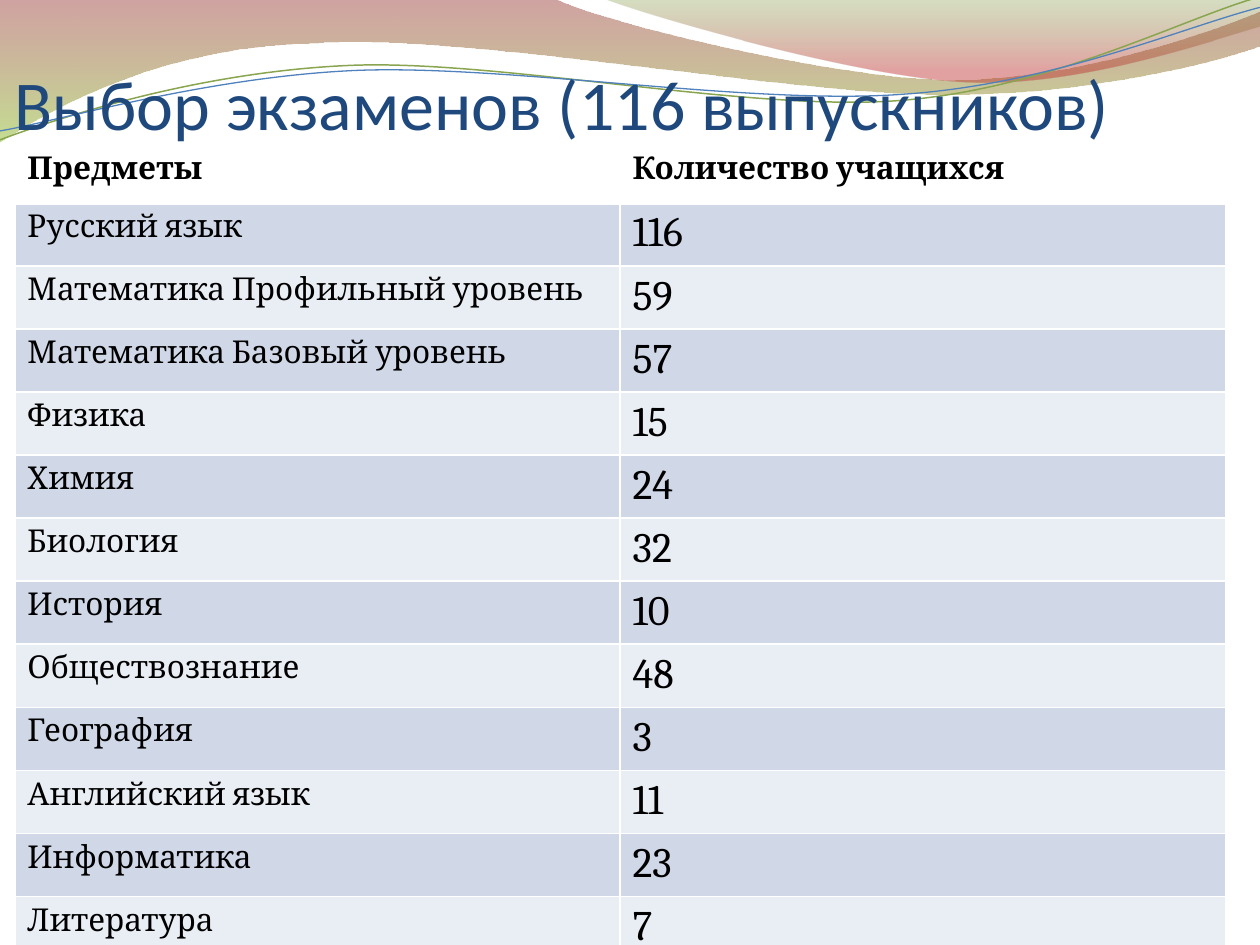
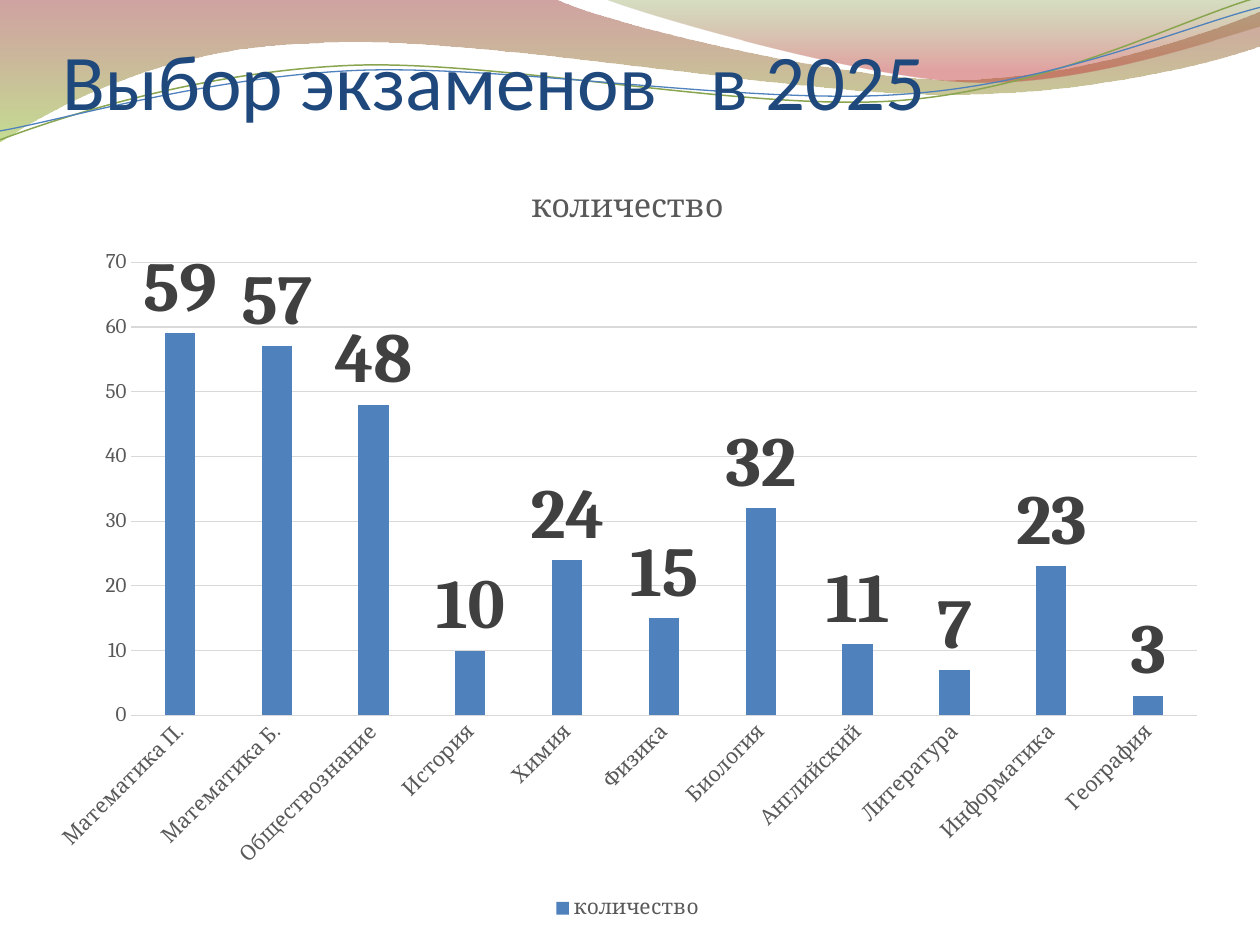
"""Builds two slides on exam choices: a table of subjects and a column chart."""
from lxml.etree import SubElement as Sub
from pptx import Presentation
from pptx.chart.data import CategoryChartData as Data
from pptx.dml.color import RGBColor
from pptx.enum.chart import XL_CHART_TYPE as Kind, XL_LABEL_POSITION as Spot
from pptx.enum.chart import XL_LEGEND_POSITION as Side, XL_TICK_MARK as Tick
from pptx.enum.text import MSO_ANCHOR as Anchor
from pptx.oxml.ns import qn
from pptx.util import Cm, Pt

HEADS = ("Предметы", "Количество учащихся")
EXAMS = {
    "Русский язык": 116,
    "Математика Профильный уровень": 59,
    "Математика Базовый уровень": 57,
    "Физика": 15,
    "Химия": 24,
    "Биология": 32,
    "История": 10,
    "Обществознание": 48,
    "География": 3,
    "Английский язык": 11,
    "Информатика": 23,
    "Литература": 7,
}
BARS = {
    "Математика П.": "Математика Профильный уровень",
    "Математика Б.": "Математика Базовый уровень",
    "Обществознание": "Обществознание",
    "История": "История",
    "Химия": "Химия",
    "Физика": "Физика",
    "Биология": "Биология",
    "Английский": "Английский язык",
    "Литература": "Литература",
    "Информатика": "Информатика",
    "География": "География",
}
SERIES = "количество"
TITLES = (
    ("Выбор экзаменов (116 выпускников)", 40, (0.3, 1.12, 24.61, 1.8)),
    ("Выбор экзаменов   в 2025", 45, (1.27, 0.53, 22.86, 2.01)),
)
HEAD, BODY = "Calibri", "Cambria"
NAVY, BLUE, GREEN = "1F497D", "4F81BD", "89A54F"
BLACK, WHITE, DARK, GREY, PALE = "000000", "FFFFFF", "404040", "595959", "D9D9D9"
BANDS = ("D0D8E8", "E9EDF4")

WAVES = (
    (((0, 0), (11.18, -0.03), (12.09, 0.43, 16.87, 1.6, 19.25, 1.6),
      (21.67, 1.6, 24.33, 0.66, 25.4, 0.23), (25.43, 0.91),
      (24.97, 1.12, 22.1, 1.93, 18.95, 1.9), (15.8, 1.9, 9.7, 0.71, 6.53, 0.86),
      (3.28, 0.91, 1.17, 2.11, -0.03, 2.87), (0, 0)),
     ((0, "973330", 45), (1, "95C238", 55))),
    (((12.17, -0.03), (12.93, 0.28, 17.32, 1.57, 19.53, 1.65),
      (21.74, 1.75, 24.41, 0.81, 25.4, 0.53), (25.4, 0), (12.17, -0.03)),
     ((0, "769537", 30), (0.8, "BE3330", 45))),
)
LINES = (
    (((0, 2.82), (1.22, 2.36, 4.01, 1.45, 7.04, 1.32),
      (10.03, 1.19, 15.06, 2.26, 18.11, 2.03),
      (21.16, 1.8, 23.83, 0.38, 25.35, -0.05)), GREEN, 0.85),
    (((0, 2.64), (1.19, 2.44, 4.17, 1.55, 7.19, 1.42),
      (10.24, 1.3, 15.16, 2.13, 18.21, 1.9),
      (21.23, 1.7, 23.9, 0.53, 25.4, 0.15)), BLUE, 0.75),
)


def rgb(code):
    return RGBColor.from_string(code)


def style(font, size, face, code, bold=False):
    font.size, font.name, font.bold = Pt(size), face, bold
    font.color.rgb = rgb(code)


def trace(slide, route, close):
    dots = [(Cm(seg[i]), Cm(seg[i + 1]))
            for seg in route for i in range(0, len(seg), 2)]
    pen = slide.shapes.build_freeform(*dots[0])
    pen.add_line_segments(dots[1:], close=close)
    shape = pen.convert_to_shape()
    shape.shadow.inherit = False
    legs = iter(shape._element.xpath(".//a:lnTo"))
    for seg in route[1:]:
        leg = next(legs)
        if len(seg) == 6:
            leg.tag = qn("a:cubicBezTo")
            for other in (next(legs), next(legs)):
                leg.append(other[0])
                other.getparent().remove(other)
    return shape


def add_waves(slide):
    for route, stops in WAVES:
        wave = trace(slide, route, True)
        wave.line.fill.background()
        wave.fill.gradient()
        wave.fill.gradient_angle = 270
        for stop, (place, code, _) in zip(wave.fill.gradient_stops, stops):
            stop.position, stop.color.rgb = place, rgb(code)
        tints = wave._element.xpath(".//a:gradFill//a:srgbClr")
        for tint, (_, _, alpha) in zip(tints, stops):
            Sub(tint, qn("a:alpha"), val=str(alpha * 1000))
    for route, code, width in LINES:
        curve = trace(slide, route, False)
        curve.fill.background()
        curve.line.color.rgb, curve.line.width = rgb(code), Pt(width)


def add_title(slide, text, size, area):
    frame = slide.shapes.add_textbox(*map(Cm, area)).text_frame
    frame.word_wrap, frame.vertical_anchor = True, Anchor.BOTTOM
    frame.margin_left = frame.margin_right = frame.margin_bottom = 0
    frame.margin_top = Cm(0.13)
    frame.text = text
    style(frame.paragraphs[0].runs[0].font, size, HEAD, NAVY)


def edge(cell):
    props = cell._tc.get_or_add_tcPr()
    widths = {"a:lnL": 1, "a:lnR": 1, "a:lnT": 1, "a:lnB": 3}
    for spot, (tag, width) in enumerate(widths.items()):
        line = Sub(props, qn(tag), w=str(Pt(width)))
        Sub(Sub(line, qn("a:solidFill")), qn("a:srgbClr"), val=WHITE)
        props.insert(spot, line)


def add_grid(slide):
    rows = [HEADS, *EXAMS.items()]
    area = map(Cm, (0.3, 2.92, 24.4, 16.05))
    grid = slide.shapes.add_table(len(rows), len(HEADS), *area).table
    for col in grid.columns:
        col.width = Cm(12.2)
    for r, row in enumerate(rows):
        grid.rows[r].height = Cm(1.24 if r else 1.17)
        for c, value in enumerate(row):
            cell = grid.cell(r, c)
            cell.text = str(value)
            font = cell.text_frame.paragraphs[0].runs[0].font
            style(font, 24 if r and c else 18, BODY, BLACK, r == 0)
            cell.fill.solid()
            cell.fill.fore_color.rgb = rgb(BANDS[(r - 1) % 2] if r else WHITE)
            if r == 0:
                edge(cell)


def add_bars(slide):
    data = Data()
    data.categories = list(BARS)
    data.add_series(SERIES, [EXAMS[name] for name in BARS.values()])
    area = map(Cm, (0.7, 3.13, 23.9, 15.52))
    chart = slide.shapes.add_chart(Kind.COLUMN_CLUSTERED, *area, data).chart
    style(chart.font, 10, BODY, BLACK)
    chart.has_title = True
    title = chart.chart_title.text_frame
    title.text = SERIES
    style(title.paragraphs[0].runs[0].font, 18.6, BODY, GREY)
    chart.has_legend = True
    chart.legend.position, chart.legend.include_in_layout = Side.BOTTOM, False
    style(chart.legend.font, 12, BODY, GREY)

    cats, vals = chart.category_axis, chart.value_axis
    for axis in (cats, vals):
        axis.major_tick_mark = axis.minor_tick_mark = Tick.NONE
        style(axis.tick_labels.font, 12, BODY, GREY)
        turn = axis._element.xpath("c:txPr/a:bodyPr")[0]
        turn.set("rot", "-60000000")
        turn.set("vert", "horz")
    vals.format.line.fill.background()
    for line in (cats.format.line, vals.major_gridlines.format.line):
        line.color.rgb, line.width = rgb(PALE), Pt(0.75)

    plot = chart.plots[0]
    plot.gap_width, plot.overlap, plot.vary_by_categories = 219, -27, False
    fill = plot.series[0].format.fill
    fill.solid()
    fill.fore_color.rgb = rgb(BLUE)
    plot.has_data_labels = True
    marks = plot.data_labels
    marks.show_value, marks.position = True, Spot.OUTSIDE_END
    style(marks.font, 40, BODY, DARK, True)


def main():
    deck = Presentation()
    deck.slide_width, deck.slide_height = Cm(25.4), Cm(19.05)
    for title, add_body in zip(TITLES, (add_grid, add_bars)):
        slide = deck.slides.add_slide(deck.slide_layouts[6])
        add_waves(slide)
        add_title(slide, *title)
        add_body(slide)
    deck.save("out.pptx")


if __name__ == "__main__":
    main()
